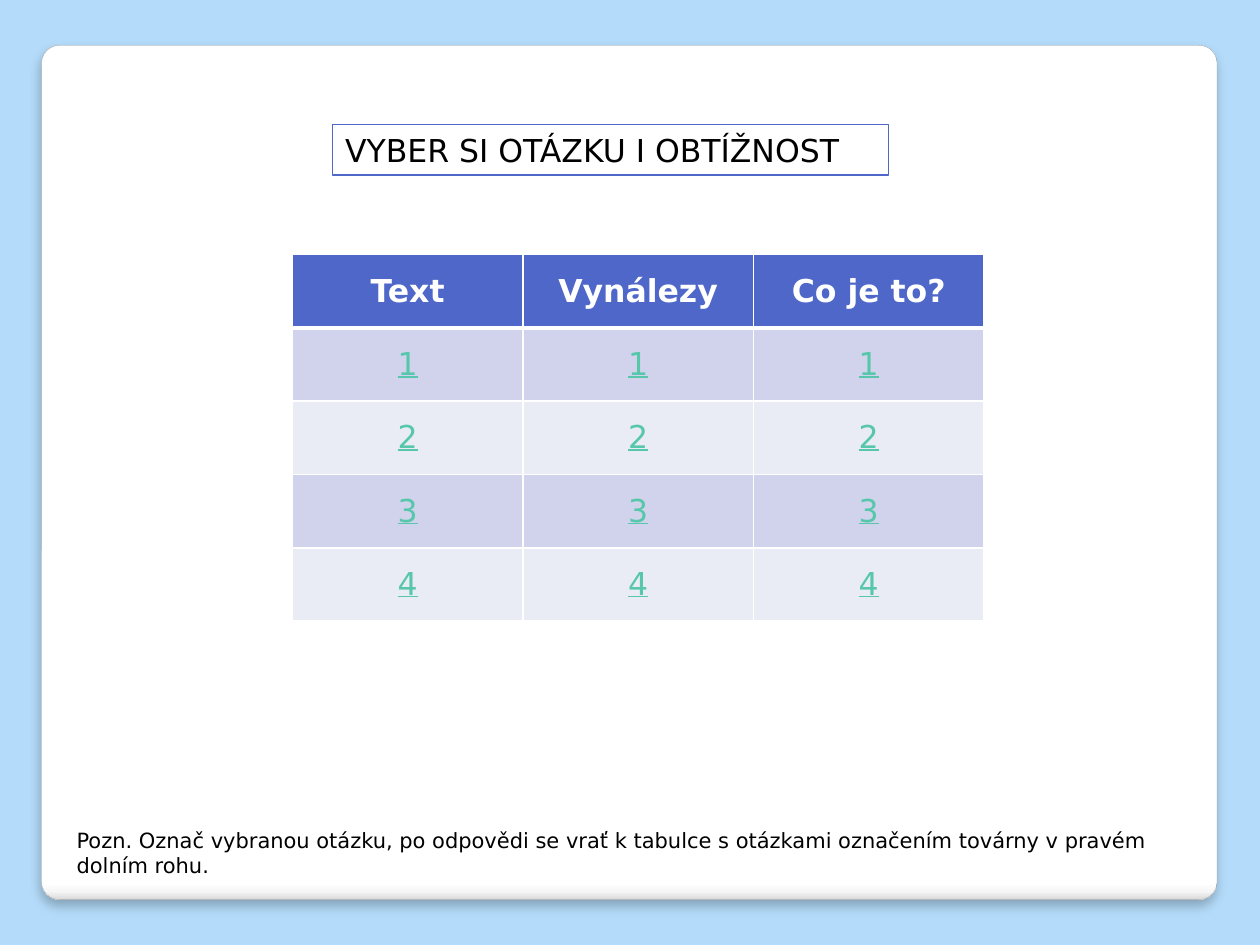
from dataclasses import dataclass

from lxml.etree import SubElement as Sub
from pptx import Presentation
from pptx.dml.color import RGBColor as RGB
from pptx.enum.shapes import MSO_SHAPE as Shape
from pptx.enum.text import MSO_ANCHOR as Anchor, PP_ALIGN as Align
from pptx.oxml.ns import qn
from pptx.util import Inches, Pt


@dataclass(frozen=True)
class Theme:
    """Colours, font and type sizes of the slide."""
    sky: str = "B4DCFA"
    white: str = "FFFFFF"
    edge: str = "A4A4A4"
    blue: str = "4E67C8"
    odd: str = "D0D3EB"
    even: str = "E9EBF5"
    link: str = "56C7AA"
    ink: str = "000000"
    font: str = "DejaVu Sans"
    body: int = 18
    small: int = 12


THEME = Theme()
PANEL = ((0, "FFFFFF"), (98, "FFFFFF"), (99, "F7F7F7"), (100, "DADADA"))
HEADS = ("Text", "Vynálezy", "Co je to?")
LEVELS = 4


def write(frame, text, size=THEME.body, color=THEME.ink, bold=False,
          under=False, align=Align.LEFT, anchor=Anchor.TOP):
    """Put one formatted paragraph into a text frame."""
    frame.word_wrap = True
    frame.vertical_anchor = anchor
    par = frame.paragraphs[0]
    par.alignment = align
    run = par.add_run()
    run.text = text
    font = run.font
    font.name, font.size = THEME.font, Pt(size)
    font.bold, font.underline = bold, under
    font.color.rgb = RGB.from_string(color)


def tint(parent, color):
    """Add a solid colour element and return it."""
    node = Sub(parent, qn("a:srgbClr"), val=color)
    return node


def add_panel(slide, box):
    """Draw the rounded panel with its shaded foot and soft shadow."""
    panel = slide.shapes.add_shape(Shape.ROUNDED_RECTANGLE, *box)
    panel.adjustments[0] = 0.021
    panel.line.color.rgb = RGB.from_string(THEME.edge)
    panel.line.width = Pt(0.16)
    panel.fill.gradient()
    panel.fill.gradient_angle = 270
    props = panel.element.spPr
    stops = props.find(".//" + qn("a:gsLst"))
    for stop in list(stops):
        stops.remove(stop)
    for place, color in PANEL:
        tint(Sub(stops, qn("a:gs"), pos=str(place * 1000)), color)
    panel.shadow.inherit = False
    shade = Sub(props.find(qn("a:effectLst")), qn("a:outerShdw"),
                blurRad=str(Pt(6)), dist=str(Pt(4)), dir="5400000",
                algn="t", rotWithShape="0")
    Sub(tint(shade, THEME.ink), qn("a:alpha"), val="25000")


def add_title(slide, box, text):
    """Draw the framed heading."""
    frame = slide.shapes.add_shape(Shape.RECTANGLE, *box)
    frame.shadow.inherit = False
    frame.fill.background()
    frame.line.color.rgb = RGB.from_string(THEME.blue)
    frame.line.width = Pt(0.75)
    write(frame.text_frame, text)


def add_edges(cell, **widths):
    """Give a cell white borders, one point wide unless told otherwise."""
    props = cell._tc.get_or_add_tcPr()
    for spot, side in enumerate("LRTB"):
        line = Sub(props, qn("a:ln" + side), w=str(Pt(widths.get(side, 1))))
        tint(Sub(line, qn("a:solidFill")), THEME.white)
        props.insert(spot, line)


def add_grid(slide, box):
    """Draw the table of topics and question levels."""
    rows, cols = LEVELS + 1, len(HEADS)
    table = slide.shapes.add_table(rows, cols, *box).table
    for col in table.columns:
        col.width = box[2] // cols
    for row in table.rows:
        row.height = box[3] // rows
    for r in range(rows):
        for c, head in enumerate(HEADS):
            cell = table.cell(r, c)
            top = r == 0
            fill = THEME.blue if top else THEME.odd if r % 2 else THEME.even
            cell.fill.solid()
            cell.fill.fore_color.rgb = RGB.from_string(fill)
            add_edges(cell, B=3 if top else 1, T=3 if r == 1 else 1)
            write(cell.text_frame, head if top else str(r),
                  color=THEME.white if top else THEME.link,
                  bold=top, under=not top, align=Align.CENTER)
            cell.vertical_anchor = Anchor.MIDDLE


def add_note(slide, box, text):
    """Place the note at the foot of the panel."""
    note = slide.shapes.add_textbox(*box)
    write(note.text_frame, text, size=THEME.small)


def inches(*sizes):
    """Turn plain numbers into a box of lengths."""
    return tuple(Inches(size) for size in sizes)


def main():
    """Build the slide and save it."""
    deck = Presentation()
    deck.slide_width, deck.slide_height = inches(10, 7.5)
    slide = deck.slides.add_slide(deck.slide_layouts[6])
    back = slide.background.fill
    back.solid()
    back.fore_color.rgb = RGB.from_string(THEME.sky)
    add_panel(slide, inches(0.33, 0.36, 9.33, 6.78))
    add_grid(slide, inches(2.32, 2.02, 5.49, 2.91))
    add_title(slide, inches(2.64, 0.99, 4.41, 0.4),
              "VYBER SI OTÁZKU I OBTÍŽNOST")
    add_note(slide, inches(0.51, 6.52, 9.06, 0.5),
             "Pozn. Označ vybranou otázku, po odpovědi se vrať k tabulce "
             "s otázkami označením továrny v pravém dolním rohu.")


    deck.save("out.pptx")


if __name__ == "__main__":
    main()
